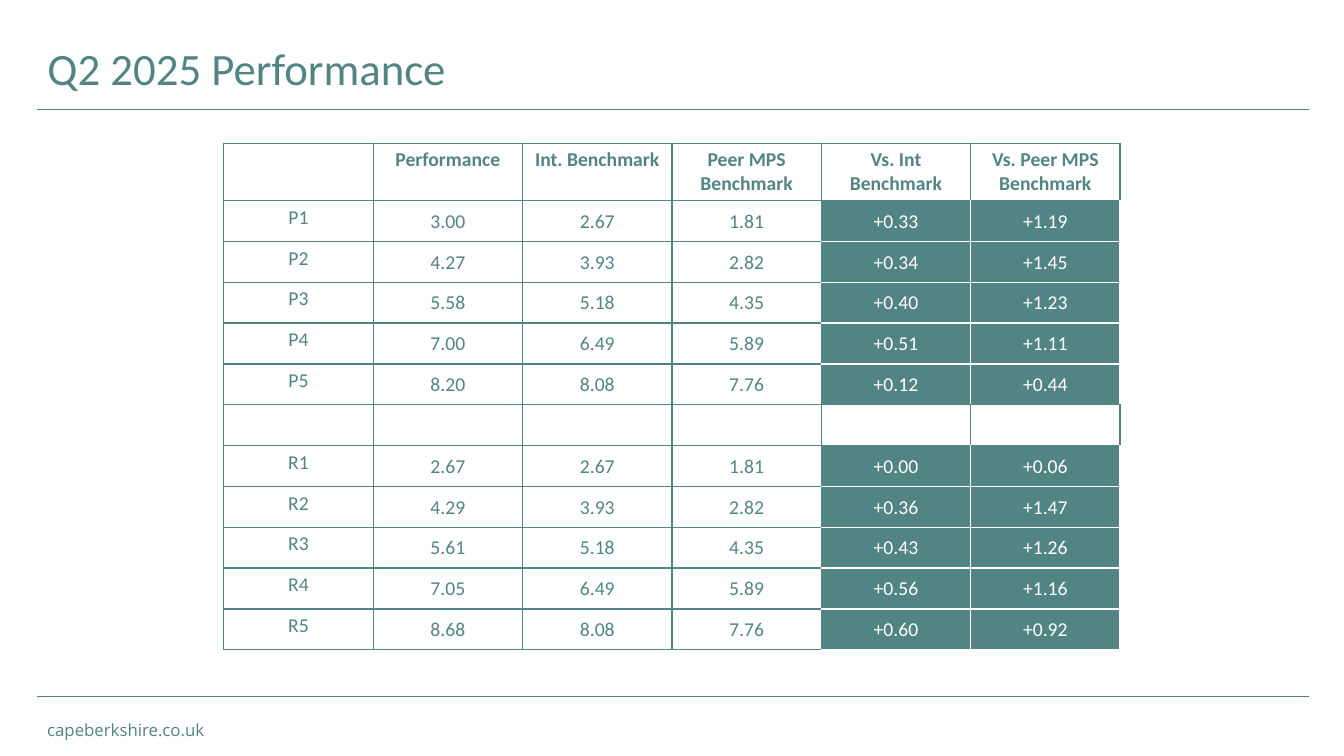
from lxml.etree import SubElement
from pptx import Presentation
from pptx.dml.color import RGBColor
from pptx.enum.shapes import MSO_CONNECTOR
from pptx.enum.text import MSO_ANCHOR, PP_ALIGN
from pptx.oxml.ns import qn
from pptx.util import Inches, Pt

COLORS = {"teal": "528484", "white": "FFFFFF"}
HEADINGS = ["", "Performance", "Int. Benchmark", "Peer MPS Benchmark",
            "Vs. Int Benchmark", "Vs. Peer MPS Benchmark"]
RESULTS = [
    ["P1", "3.00", "2.67", "1.81", "+0.33", "+1.19"],
    ["P2", "4.27", "3.93", "2.82", "+0.34", "+1.45"],
    ["P3", "5.58", "5.18", "4.35", "+0.40", "+1.23"],
    ["P4", "7.00", "6.49", "5.89", "+0.51", "+1.11"],
    ["P5", "8.20", "8.08", "7.76", "+0.12", "+0.44"],
    [""] * 6,
    ["R1", "2.67", "2.67", "1.81", "+0.00", "+0.06"],
    ["R2", "4.29", "3.93", "2.82", "+0.36", "+1.47"],
    ["R3", "5.61", "5.18", "4.35", "+0.43", "+1.26"],
    ["R4", "7.05", "6.49", "5.89", "+0.56", "+1.16"],
    ["R5", "8.68", "8.08", "7.76", "+0.60", "+0.92"],
]
FIRST_DIFFERENCE = 4
VALUE_FORMAT = {
    "vertical_anchor": MSO_ANCHOR.MIDDLE,
    "margin_left": Inches(0.01), "margin_top": Inches(0.01),
    "margin_right": Inches(0.01), "margin_bottom": Inches(0),
}


def style_font(font, size, color, name="Calibri", bold=False):
    values = {"size": Pt(size), "name": name, "bold": bold}
    for attribute, value in values.items():
        setattr(font, attribute, value)
    font.color.rgb = RGBColor.from_string(COLORS[color])


def add_border(cell, side, color):
    line = SubElement(cell._tc.get_or_add_tcPr(), qn(f"a:ln{side}"), w=str(Pt(1)))
    fill = SubElement(line, qn("a:solidFill"))
    SubElement(fill, qn("a:srgbClr"), val=COLORS[color])


deck = Presentation()
deck.slide_width, deck.slide_height = Inches(13.33), Inches(7.5)
slide = deck.slides.add_slide(deck.slide_layouts[5])

# Title
title = slide.shapes.title
title_box = {"left": 0.37, "top": 0.41, "width": 11.5, "height": 0.59}
for attribute, value in title_box.items():
    setattr(title, attribute, Inches(value))
title.text_frame.text = "Q2 2025 Performance"
title.text_frame.vertical_anchor = MSO_ANCHOR.MIDDLE
heading = title.text_frame.paragraphs[0]
heading.alignment = PP_ALIGN.LEFT
heading.line_spacing = 0.9
style_font(heading.runs[0].font, 32, "teal")

# Rules under the title and above the footer
for y in (1.09, 6.91):
    rule = slide.shapes.add_connector(
        MSO_CONNECTOR.STRAIGHT, Inches(0.37), Inches(y), Inches(12.98), Inches(y))
    rule.line.color.rgb = RGBColor.from_string(COLORS["teal"])
    rule.line.width = Pt(0.75)
    SubElement(rule._element.spPr, qn("a:effectLst"))

# Footer
footer = slide.shapes.add_textbox(Inches(0.37), Inches(7.09), Inches(3.83), Inches(0.3))
footer.text_frame.word_wrap = True
footer.text_frame.text = "capeberkshire.co.uk"
style_font(footer.text_frame.paragraphs[0].runs[0].font, 12, "teal", "Open Sans")

# Performance table
rows = [HEADINGS] + RESULTS
performance = slide.shapes.add_table(
    len(rows), len(HEADINGS), Inches(2.22), Inches(1.42), Inches(8.89), Inches(5.03)).table
performance.first_row = False
performance.horz_banding = False
header_height = Inches(0.57)
for index, row in enumerate(performance.rows):
    row.height = header_height if index == 0 else (Inches(5.03) - header_height) // len(RESULTS)

for r, texts in enumerate(rows):
    for c, text in enumerate(texts):
        cell = performance.cell(r, c)
        is_value = r > 0 and c > 0 and text != ""
        is_difference = is_value and c >= FIRST_DIFFERENCE

        # Differences have white edges inside their block and teal ones around it
        edges = dict.fromkeys("LRTB", "teal")
        if is_difference:
            above_filled = r > 1 and rows[r - 1][c] != ""
            below_empty = r + 1 < len(rows) and rows[r + 1][c] == ""
            edges = {
                "L": "teal" if c == FIRST_DIFFERENCE else "white",
                "R": "white",
                "T": "white" if above_filled else "teal",
                "B": "teal" if below_empty else "white",
            }
        for side, color in edges.items():
            add_border(cell, side, color)

        if is_difference:
            cell.fill.solid()
            cell.fill.fore_color.rgb = RGBColor.from_string(COLORS["teal"])
        else:
            cell.fill.background()
        if is_value:
            for attribute, value in VALUE_FORMAT.items():
                setattr(cell, attribute, value)

        paragraph = cell.text_frame.paragraphs[0]
        paragraph.alignment = PP_ALIGN.CENTER
        if text:
            run = paragraph.add_run()
            run.text = text
            style_font(run.font, 14, "white" if is_difference else "teal", bold=r == 0)

deck.save("out.pptx")
